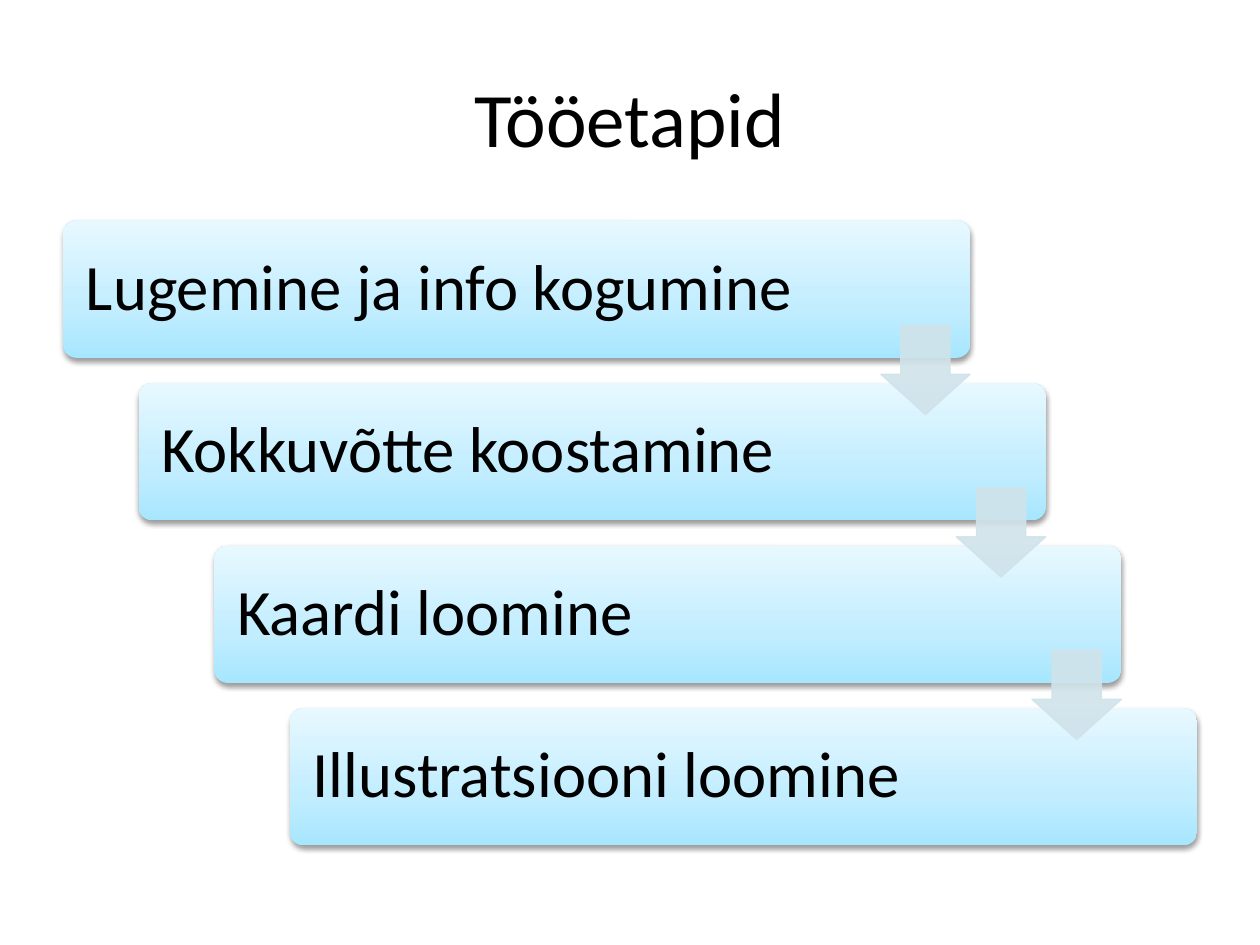
"""Build the slide of four work stages as descending steps joined by arrows."""
import pptx
import pptx.dml.color
import pptx.enum.shapes
import pptx.enum.text
import pptx.oxml
import pptx.oxml.ns
import pptx.util

PX = 9144
THEME = {
    "font": "Calibri",
    "text": "000000",
    "arrow": "D0E3EA",
    "arrow_alpha": 90000,
    "gradient": ((0, "A7E6FF"), (35000, "C1EDFF"), (100000, "E7F8FF")),
    "title_size": 44,
    "step_size": 37,
}
STAGES = (
    "Lugemine ja info kogumine",
    "Kokkuvõtte koostamine",
    "Kaardi loomine",
    "Illustratsiooni loomine",
)
SHIFT, PITCH = 60, 129
SHAPES = pptx.enum.shapes.MSO_SHAPE
ALIGN = pptx.enum.text.PP_ALIGN
NAMESPACE = pptx.oxml.ns.nsdecls("a")
STOPS = "".join(
    f'<a:gs pos="{position}"><a:srgbClr val="{color}"/></a:gs>'
    for position, color in THEME["gradient"]
)
GRADIENT = (
    f'<a:gradFill {NAMESPACE} rotWithShape="1"><a:gsLst>{STOPS}</a:gsLst>'
    '<a:lin ang="16200000" scaled="0"/></a:gradFill>'
)
SHADOW = (
    f'<a:outerShdw {NAMESPACE} blurRad="40000" dist="20000" dir="5400000" rotWithShape="0">'
    '<a:srgbClr val="000000"><a:alpha val="38000"/></a:srgbClr></a:outerShdw>'
)
ALPHA = f'<a:alpha {NAMESPACE} val="{THEME["arrow_alpha"]}"/>'


def write(shape, text, size, align, frame_format):
    frame = shape.text_frame
    frame_format = {
        "word_wrap": True,
        "vertical_anchor": pptx.enum.text.MSO_ANCHOR.MIDDLE,
        **frame_format,
    }
    for name, value in frame_format.items():
        setattr(frame, name, value)
    para = frame.paragraphs[0]
    para.alignment = align
    span = para.add_run()
    span.text = text
    for name, value in {"name": THEME["font"], "size": pptx.util.Pt(size)}.items():
        setattr(span.font, name, value)
    span.font.color.rgb = pptx.dml.color.RGBColor.from_string(THEME["text"])
    return para


def add_preset(page, kind, bounds, adjustments):
    shape = page.shapes.add_shape(kind, *(length * PX for length in bounds))
    shape.shadow.inherit = False
    for index, value in enumerate(adjustments):
        shape.adjustments[index] = value
    return shape


deck = pptx.Presentation()
deck.slide_width, deck.slide_height = 1000 * PX, 750 * PX
page = deck.slides.add_slide(deck.slide_layouts[5])

title = page.shapes.title
for name, value in {"left": 50, "top": 30, "width": 900, "height": 125}.items():
    setattr(title, name, value * PX)
write(title, "Tööetapid", THEME["title_size"], ALIGN.CENTER, {})

insets = {f"margin_{side}": 15 * PX for side in ("left", "top", "right", "bottom")}
for index, stage in enumerate(STAGES):
    bounds = (50 + index * SHIFT, 175 + index * PITCH, 720, 109)
    box = add_preset(page, SHAPES.ROUNDED_RECTANGLE, bounds, (0.1,))
    box.line.fill.background()
    properties = box.element.spPr
    outline = properties.find(pptx.oxml.ns.qn("a:ln"))
    outline.addprevious(pptx.oxml.parse_xml(GRADIENT))
    effects = properties.find(pptx.oxml.ns.qn("a:effectLst"))
    effects.append(pptx.oxml.parse_xml(SHADOW))
    para = write(box, stage, THEME["step_size"], ALIGN.LEFT, insets)
    para.line_spacing = 0.9

arrow_color = pptx.dml.color.RGBColor.from_string(THEME["arrow"])
for index in range(len(STAGES) - 1):
    bounds = (699 + index * SHIFT, 258 + index * PITCH, 71, 71)
    arrow = add_preset(page, SHAPES.DOWN_ARROW, bounds, (0.55, 0.45))
    for fill in (arrow.fill, arrow.line.fill):
        fill.solid()
        fill.fore_color.rgb = arrow_color
    arrow.line.width = pptx.util.Pt(0.75)
    for color in arrow.element.spPr.iter(pptx.oxml.ns.qn("a:srgbClr")):
        color.append(pptx.oxml.parse_xml(ALPHA))

deck.save("out.pptx")
